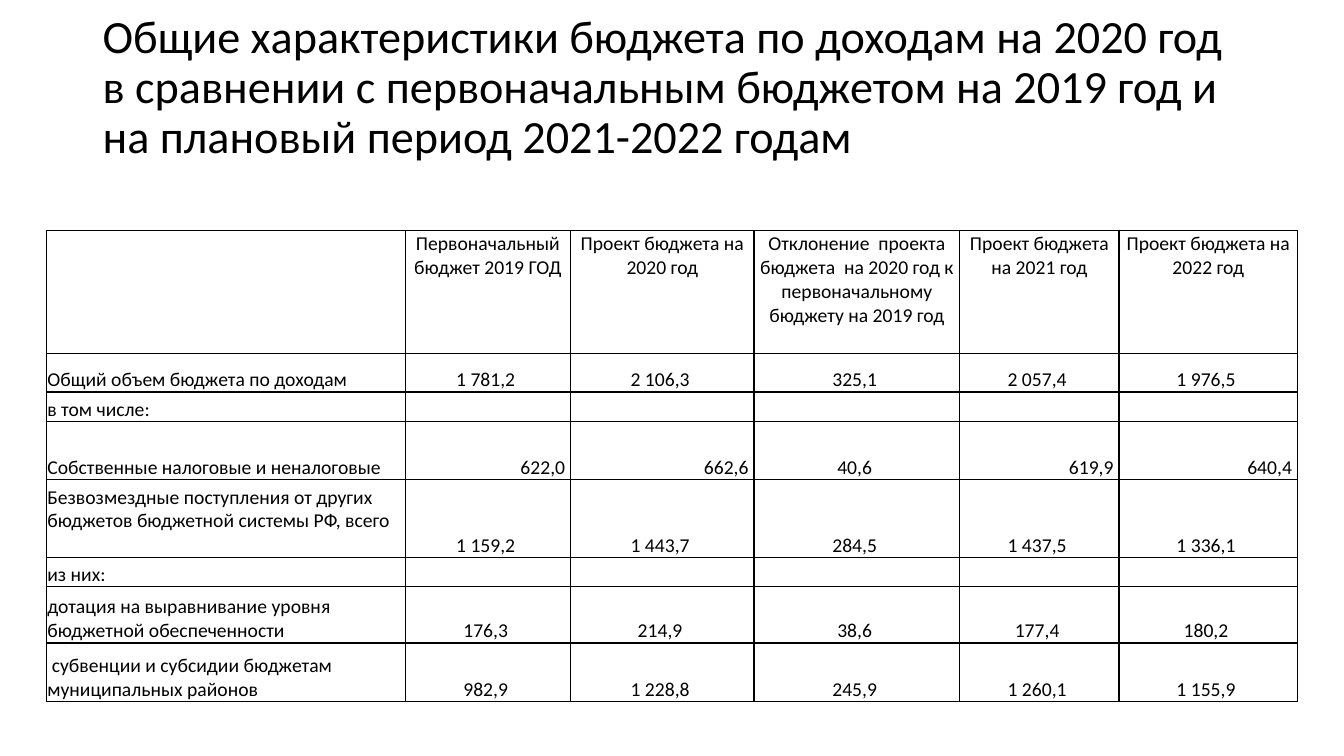
from lxml.etree import SubElement
from pptx import Presentation
from pptx.dml.color import RGBColor
from pptx.enum.text import MSO_ANCHOR, PP_ALIGN
from pptx.oxml.ns import qn
from pptx.util import Inches, Pt

BLACK = RGBColor(0, 0, 0)
FONT = "Calibri"
BODY_SIZE = 14
TITLE = ("Общие характеристики бюджета по доходам на 2020 год в сравнении "
         "с первоначальным бюджетом на 2019 год и на плановый период 2021-2022 годам")
COLS = [3.56, 1.64, 1.82, 2.04, 1.58, 1.77]
ROWS = [1.22, 0.38, 0.29, 0.58, 0.77, 0.29, 0.56, 0.58]
OWN_REVENUE_ROW, TRANSFERS_ROW = 3, 4
DEVIATION_COL = 3
BUDGET = [
    ["", "Первоначальный бюджет 2019 ГОД", "Проект бюджета на 2020 год",
     "Отклонение  проекта бюджета  на 2020 год к первоначальному бюджету на 2019 год",
     "Проект бюджета на 2021 год", "Проект бюджета на 2022 год"],
    ["Общий объем бюджета по доходам",
     "1 781,2 ", "2 106,3 ", "325,1 ", "2 057,4 ", "1 976,5 "],
    ["в том числе:"] + [""] * 5,
    ["Собственные налоговые и неналоговые",
     "622,0 ", "662,6 ", "40,6 ", "619,9 ", "640,4 "],
    ["Безвозмездные поступления от других бюджетов бюджетной системы РФ, всего",
     "1 159,2 ", "1 443,7 ", "284,5 ", "1 437,5 ", "1 336,1 "],
    ["из них:"] + [""] * 5,
    ["дотация на выравнивание уровня бюджетной обеспеченности",
     "176,3 ", "214,9 ", "38,6 ", "177,4 ", "180,2 "],
    [" субвенции и субсидии бюджетам муниципальных районов",
     "982,9 ", "1 228,8 ", "245,9 ", "1 260,1 ", "1 155,9 "],
]


def add_text(p, text, size):
    r = p.add_run()
    r.text = text
    r.font.name = FONT
    r.font.size = Pt(size)
    r.font.color.rgb = BLACK


def add_title(s):
    box = s.shapes.add_textbox(Inches(0.92), Inches(0.4), Inches(11.5), Inches(1.45))
    tf = box.text_frame
    tf.word_wrap = True
    tf.vertical_anchor = MSO_ANCHOR.MIDDLE
    tf.margin_bottom = Inches(0.55)
    p = tf.paragraphs[0]
    p.line_spacing = 0.9
    add_text(p, TITLE, 33)


def add_borders(cell):
    """Rule all four sides; the lines must precede the fill in the cell XML."""
    tc_pr = cell._tc.get_or_add_tcPr()
    for i, side in enumerate(("a:lnL", "a:lnR", "a:lnT", "a:lnB")):
        ln = SubElement(tc_pr, qn(side), w=str(Pt(1)))
        fill = SubElement(ln, qn("a:solidFill"))
        SubElement(fill, qn("a:srgbClr"), val=str(BLACK))
        tc_pr.insert(i, ln)


def alignment(row, col):
    if col == 0:
        return PP_ALIGN.LEFT
    if row == OWN_REVENUE_ROW and col != DEVIATION_COL:
        return PP_ALIGN.RIGHT
    return PP_ALIGN.CENTER


def fill_cell(cell, row, col, text):
    cell.margin_left = cell.margin_right = cell.margin_top = Inches(0.01)
    cell.margin_bottom = Inches(0.24 if (row, col) == (TRANSFERS_ROW, 0) else 0)
    cell.vertical_anchor = MSO_ANCHOR.BOTTOM if row else MSO_ANCHOR.TOP
    cell.fill.background()
    add_borders(cell)
    p = cell.text_frame.paragraphs[0]
    p.alignment = alignment(row, col)
    if text:
        add_text(p, text, BODY_SIZE)
    else:
        SubElement(p._p, qn("a:endParaRPr"), sz=str(BODY_SIZE * 100))


def add_budget_table(s):
    frame = s.shapes.add_table(len(ROWS), len(COLS), Inches(0.46), Inches(2.29),
                               Inches(sum(COLS)), Inches(sum(ROWS)))
    table = frame.table
    table.first_row = table.horz_banding = False
    for column, width in zip(table.columns, COLS):
        column.width = Inches(width)
    for row, (height, texts) in enumerate(zip(ROWS, BUDGET)):
        table.rows[row].height = Inches(height)
        for col, text in enumerate(texts):
            fill_cell(table.cell(row, col), row, col, text)


def main():
    prs = Presentation()
    prs.slide_width, prs.slide_height = Inches(13.33), Inches(7.5)
    s = prs.slides.add_slide(prs.slide_layouts[6])
    add_title(s)
    add_budget_table(s)
    prs.save("out.pptx")


if __name__ == "__main__":
    main()
